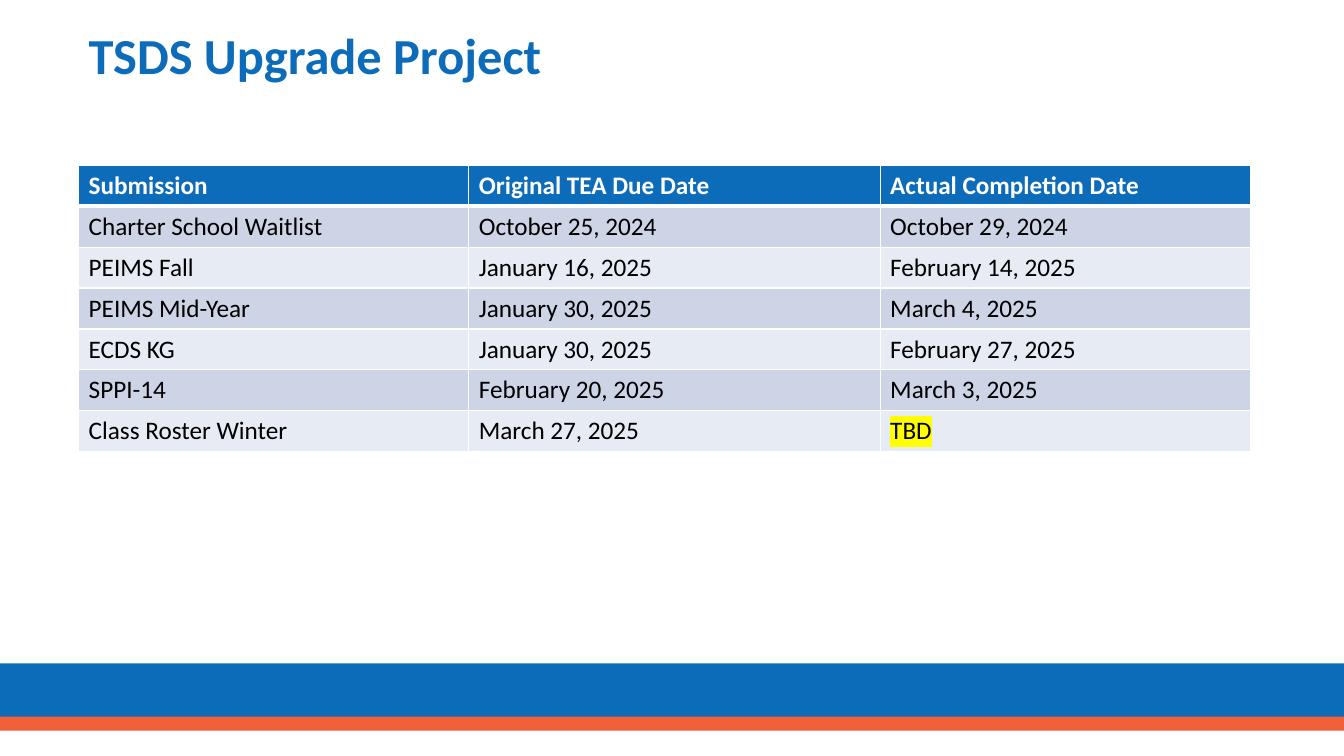
from lxml import etree
from pptx import Presentation
from pptx.dml.color import RGBColor
from pptx.enum import shapes, text
from pptx.oxml.ns import qn
from pptx.util import Inches, Pt

BLUE = RGBColor(0x0D, 0x6C, 0xB9)
ORANGE = RGBColor(0xF1, 0x60, 0x38)
WHITE = RGBColor(0xFF, 0xFF, 0xFF)
BLACK = RGBColor(0x00, 0x00, 0x00)
DARK_BAND = RGBColor(0xCC, 0xD4, 0xE6)
LIGHT_BAND = RGBColor(0xE7, 0xEB, 0xF3)
YELLOW = RGBColor(0xFF, 0xFF, 0x00)
FONT = "Calibri"

SUBMISSIONS = [
    ("Submission", "Original TEA Due Date", "Actual Completion Date"),
    ("Charter School Waitlist", "October 25, 2024", "October 29, 2024"),
    ("PEIMS Fall", "January 16, 2025", "February 14, 2025"),
    ("PEIMS Mid-Year", "January 30, 2025", "March 4, 2025"),
    ("ECDS KG", "January 30, 2025", "February 27, 2025"),
    ("SPPI-14", "February 20, 2025", "March 3, 2025"),
    ("Class Roster Winter", "March 27, 2025", "TBD"),
]
COLUMN_WIDTHS = (3.87, 4.08, 3.67)
ROW_HEIGHT = 0.406


def add_color(parent, tag, color):
    element = etree.SubElement(parent, qn(tag))
    etree.SubElement(element, qn("a:srgbClr"), val=str(color))
    return element


def style_run(run, size, color, bold):
    run.font.name = FONT
    run.font.size = Pt(size)
    run.font.bold = bold
    run.font.color.rgb = color


presentation = Presentation()
presentation.slide_width = Inches(13.33)
presentation.slide_height = Inches(7.5)
slide = presentation.slides.add_slide(presentation.slide_layouts[6])

# Footer bands
for top, height, color in ((6.58, 0.58, BLUE), (7.11, 0.14, ORANGE)):
    band = slide.shapes.add_shape(
        shapes.MSO_SHAPE.RECTANGLE, 0, Inches(top), presentation.slide_width, Inches(height))
    band.shadow.inherit = False
    band.fill.solid()
    band.fill.fore_color.rgb = color
    band.line.fill.background()

# Title
title = slide.shapes.add_textbox(Inches(0.78), Inches(0.17), Inches(12.16), Inches(0.82))
title.text_frame.word_wrap = True
title.text_frame.vertical_anchor = text.MSO_ANCHOR.MIDDLE
title.text_frame.text = "TSDS Upgrade Project"
paragraph = title.text_frame.paragraphs[0]
paragraph.line_spacing = 0.9
style_run(paragraph.runs[0], 36, BLUE, True)

# Submission table
table = slide.shapes.add_table(
    len(SUBMISSIONS), len(COLUMN_WIDTHS), Inches(0.78), Inches(1.64),
    Inches(sum(COLUMN_WIDTHS)), Inches(ROW_HEIGHT * len(SUBMISSIONS))).table
for column, width in zip(table.columns, COLUMN_WIDTHS):
    column.width = Inches(width)

for row_index, values in enumerate(SUBMISSIONS):
    table.rows[row_index].height = Inches(ROW_HEIGHT)
    is_header = row_index == 0
    row_fill = BLUE if is_header else DARK_BAND if row_index % 2 else LIGHT_BAND
    for column_index, value in enumerate(values):
        cell = table.cell(row_index, column_index)
        cell.text_frame.text = value
        run = cell.text_frame.paragraphs[0].runs[0]
        style_run(run, 18, WHITE if is_header else BLACK, is_header)

        # White borders, thicker beneath the header
        border_widths = {"L": 1, "R": 1, "T": 3 if row_index == 1 else 1,
                         "B": 3 if is_header else 1}
        properties = cell._tc.get_or_add_tcPr()
        for side, width in border_widths.items():
            border = etree.SubElement(properties, qn(f"a:ln{side}"), w=str(Pt(width)))
            add_color(border, "a:solidFill", WHITE)
        cell.fill.solid()
        cell.fill.fore_color.rgb = row_fill

        # Highlight the pending date
        if value == "TBD":
            run_properties = run.font._element
            highlight = add_color(run_properties, "a:highlight", YELLOW)
            run_properties.find(qn("a:solidFill")).addnext(highlight)

presentation.save("out.pptx")
